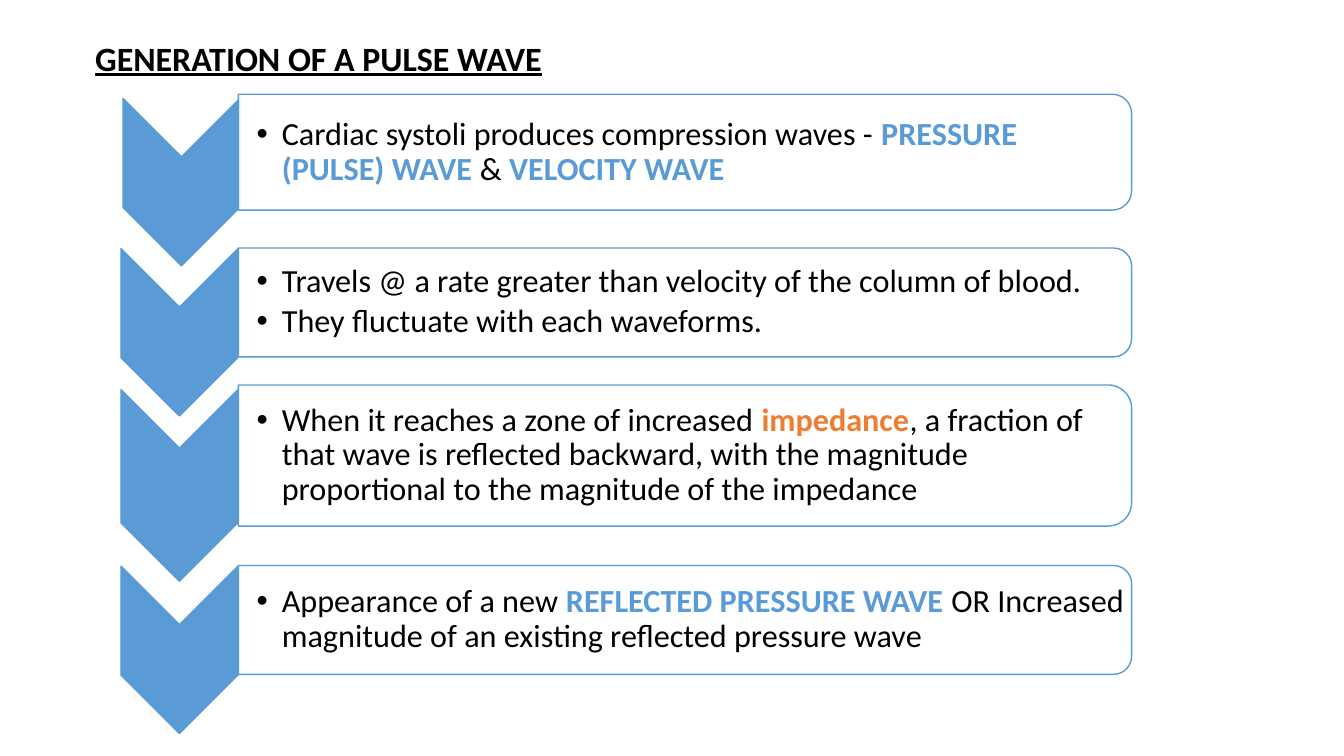
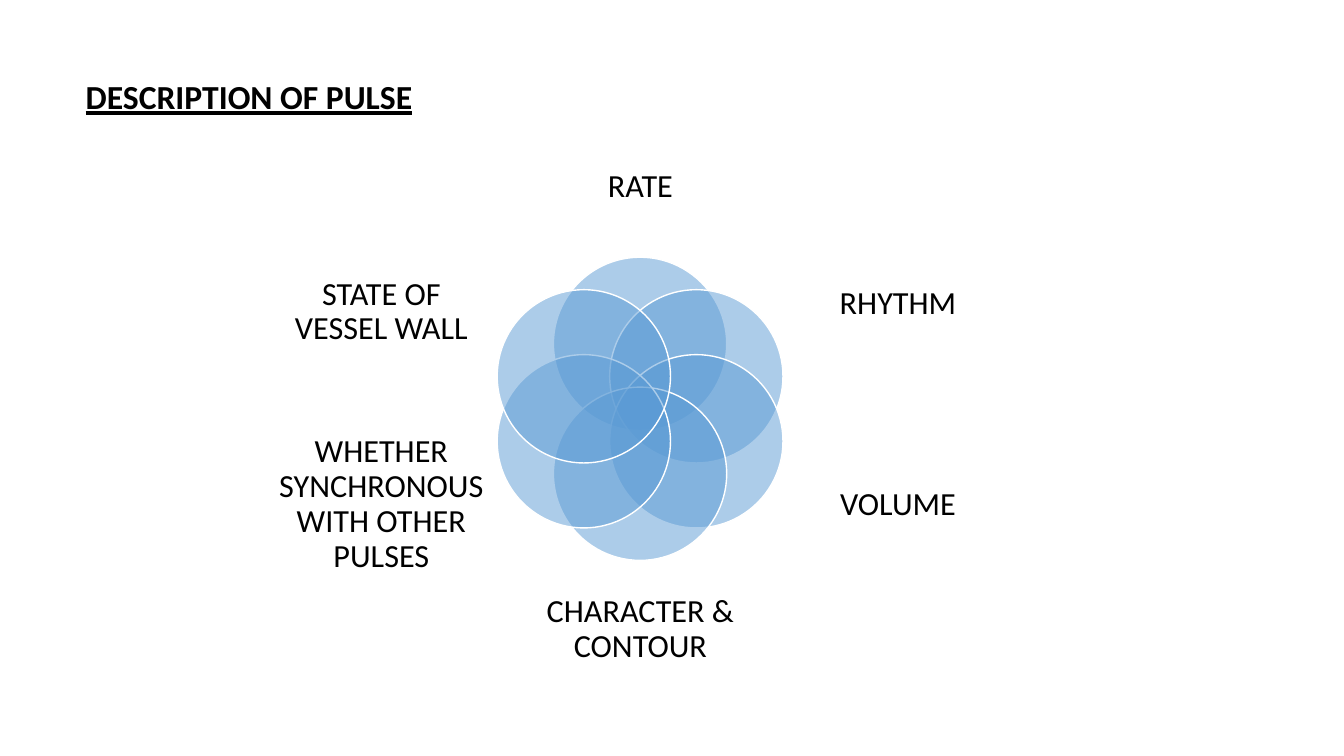
import math
from dataclasses import dataclass

import lxml.etree
import pptx
import pptx.dml.color
import pptx.enum.shapes
import pptx.enum.text
import pptx.oxml.ns
import pptx.util

Pt = pptx.util.Pt
RGBColor = pptx.dml.color.RGBColor
Shapes = pptx.enum.shapes.MSO_SHAPE
Align = pptx.enum.text.PP_ALIGN
qn = pptx.oxml.ns.qn

BLACK = RGBColor(0x00, 0x00, 0x00)
WHITE = RGBColor(0xFF, 0xFF, 0xFF)
BLUE = RGBColor(0x5B, 0x9B, 0xD5)
ORANGE = RGBColor(0xED, 0x7D, 0x31)

FONT = "Calibri"
BODY_SIZE = 23
LINE_SPACING = 0.9
TITLE_ONLY = 5

BOX_LEFT = 170.3
BOX_WIDTH = 638
CHEVRON_WIDTH = 83.5
CHEVRON_DROP = 21.4
LIST_WIDTH = 635
BULLET_INDENT = 18

CIRCLE_SIZE = 123.8
RING_RADIUS = 46.4
RING_CENTER = (457.2, 292)


@dataclass(frozen=True)
class Area:
    left: float
    top: float
    width: float
    height: float


@dataclass(frozen=True)
class Span:
    text: str
    color: RGBColor = BLACK
    bold: bool = False


@dataclass(frozen=True)
class Step:
    middle: float
    height: float
    chevron_center: float
    chevron_length: float
    bullets: list[list[Span]]


@dataclass(frozen=True)
class Petal:
    label: str
    area: Area


STEPS = [
    Step(108.7, 82.8, 129.6, 119.5, [[
        Span("Cardiac systoli produces compression waves - "),
        Span("PRESSURE (PULSE) WAVE ", BLUE, True),
        Span("& "),
        Span("VELOCITY WAVE", BLUE, True),
    ]]),
    Step(216, 77.8, 128.2, 119.5, [
        [Span("Travels @ a rate greater than velocity of the column of blood.")],
        [Span("They fluctuate with each waveforms.")],
    ]),
    Step(325.4, 100.8, 128.2, 136.8, [[
        Span("When it reaches a zone of increased "),
        Span("impedance", ORANGE, True),
        Span(", a fraction of that wave is reflected backward, with the "
             "magnitude proportional to the magnitude of the impedance"),
    ]]),
    Step(442.8, 77.8, 128.2, 119.5, [[
        Span("Appearance of a new "),
        Span("REFLECTED PRESSURE WAVE ", BLUE, True),
        Span("OR Increased magnitude of an existing reflected pressure wave"),
    ]]),
]

PETALS = [
    Petal("RATE", Area(380, 91.5, 155, 84)),
    Petal("RHYTHM", Area(568, 171.4, 147, 92)),
    Petal("VOLUME", Area(568, 309, 147, 103)),
    Petal("CHARACTER & CONTOUR", Area(380, 407.5, 155, 84)),
    Petal("WHETHER SYNCHRONOUS WITH OTHER PULSES", Area(199, 309, 147, 103)),
    Petal("STATE OF VESSEL WALL", Area(199, 171.4, 147, 103)),
]


def add_span(para, span: Span, size: float = BODY_SIZE, underline: bool = False) -> None:
    run = para.add_run()
    run.text = span.text
    run.font.name = FONT
    run.font.size = Pt(size)
    run.font.bold = span.bold
    run.font.underline = underline
    run.font.color.rgb = span.color


def add_page(deck, title: str, area: Area, size: float):
    page = deck.slides.add_slide(deck.slide_layouts[TITLE_ONLY])
    box = page.shapes.title
    box.left, box.top = Pt(area.left), Pt(area.top)
    box.width, box.height = Pt(area.width), Pt(area.height)
    frame = box.text_frame
    frame.auto_size = pptx.enum.text.MSO_AUTO_SIZE.NONE
    frame.vertical_anchor = pptx.enum.text.MSO_ANCHOR.MIDDLE
    para = frame.paragraphs[0]
    para.alignment = Align.LEFT
    para.line_spacing = LINE_SPACING
    add_span(para, Span(title, bold=True), size, underline=True)
    return page


def add_figure(page, kind, center: tuple[float, float], width: float, height: float,
               fill: RGBColor, line: RGBColor, opacity: int = 100, rotation: float = 0) -> None:
    shape = page.shapes.add_shape(
        kind, Pt(center[0] - width / 2), Pt(center[1] - height / 2), Pt(width), Pt(height))
    shape.rotation = rotation
    shape.shadow.inherit = False
    shape.fill.solid()
    shape.fill.fore_color.rgb = fill
    shape.line.color.rgb = line
    shape.line.width = Pt(1)
    if opacity < 100:
        color = shape.element.spPr.find(qn("a:solidFill"))[0]
        lxml.etree.SubElement(color, qn("a:alpha"), val=str(opacity * 1000))


def add_text_frame(page, area: Area, left_margin: float = 0, margin: float = 0):
    box = page.shapes.add_textbox(
        Pt(area.left), Pt(area.top), Pt(area.width), Pt(area.height))
    frame = box.text_frame
    frame.word_wrap = True
    frame.vertical_anchor = pptx.enum.text.MSO_ANCHOR.MIDDLE
    frame.margin_left = Pt(left_margin)
    frame.margin_top = frame.margin_right = frame.margin_bottom = Pt(margin)
    return frame


def add_bullet(para) -> None:
    properties = para._p.get_or_add_pPr()
    properties.set("marL", str(Pt(BULLET_INDENT)))
    properties.set("indent", str(-Pt(BULLET_INDENT)))
    lxml.etree.SubElement(properties, qn("a:buFont"), typeface="Arial")
    lxml.etree.SubElement(properties, qn("a:buChar"), char="•")


def add_step(page, step: Step) -> None:
    add_figure(page, Shapes.CHEVRON, (step.chevron_center, step.middle + CHEVRON_DROP),
               step.chevron_length, CHEVRON_WIDTH, BLUE, BLUE, rotation=90)
    add_figure(page, Shapes.ROUND_2_SAME_RECTANGLE,
               (BOX_LEFT + BOX_WIDTH / 2, step.middle),
               step.height, BOX_WIDTH, WHITE, BLUE, opacity=90, rotation=90)
    text_height = step.height - 8
    area = Area(BOX_LEFT, step.middle - text_height / 2, LIST_WIDTH, text_height)
    frame = add_text_frame(page, area, left_margin=13, margin=1.4)
    for index, spans in enumerate(step.bullets):
        para = frame.add_paragraph() if index else frame.paragraphs[0]
        para.level = 1
        para.alignment = Align.LEFT
        para.line_spacing = LINE_SPACING
        para.space_after = Pt(3.5)
        add_bullet(para)
        for span in spans:
            add_span(para, span)


def add_petal(page, petal: Petal, angle: float) -> None:
    center = (RING_CENTER[0] + RING_RADIUS * math.sin(angle),
              RING_CENTER[1] - RING_RADIUS * math.cos(angle))
    add_figure(page, Shapes.OVAL, center, CIRCLE_SIZE, CIRCLE_SIZE, BLUE, WHITE, opacity=50)
    para = add_text_frame(page, petal.area).paragraphs[0]
    para.alignment = Align.CENTER
    para.line_spacing = LINE_SPACING
    add_span(para, Span(petal.label))


def main() -> None:
    deck = pptx.Presentation()
    deck.slide_width, deck.slide_height = Pt(960), Pt(540)

    generation = add_page(deck, "GENERATION OF A PULSE WAVE", Area(60.8, 26, 741, 34), 24.3)
    for step in STEPS:
        add_step(generation, step)

    description = add_page(deck, "DESCRIPTION OF PULSE", Area(54, 46, 741, 49), 24)
    for index, petal in enumerate(PETALS):
        add_petal(description, petal, math.tau * index / len(PETALS))

    deck.save("out.pptx")


if __name__ == "__main__":
    main()
